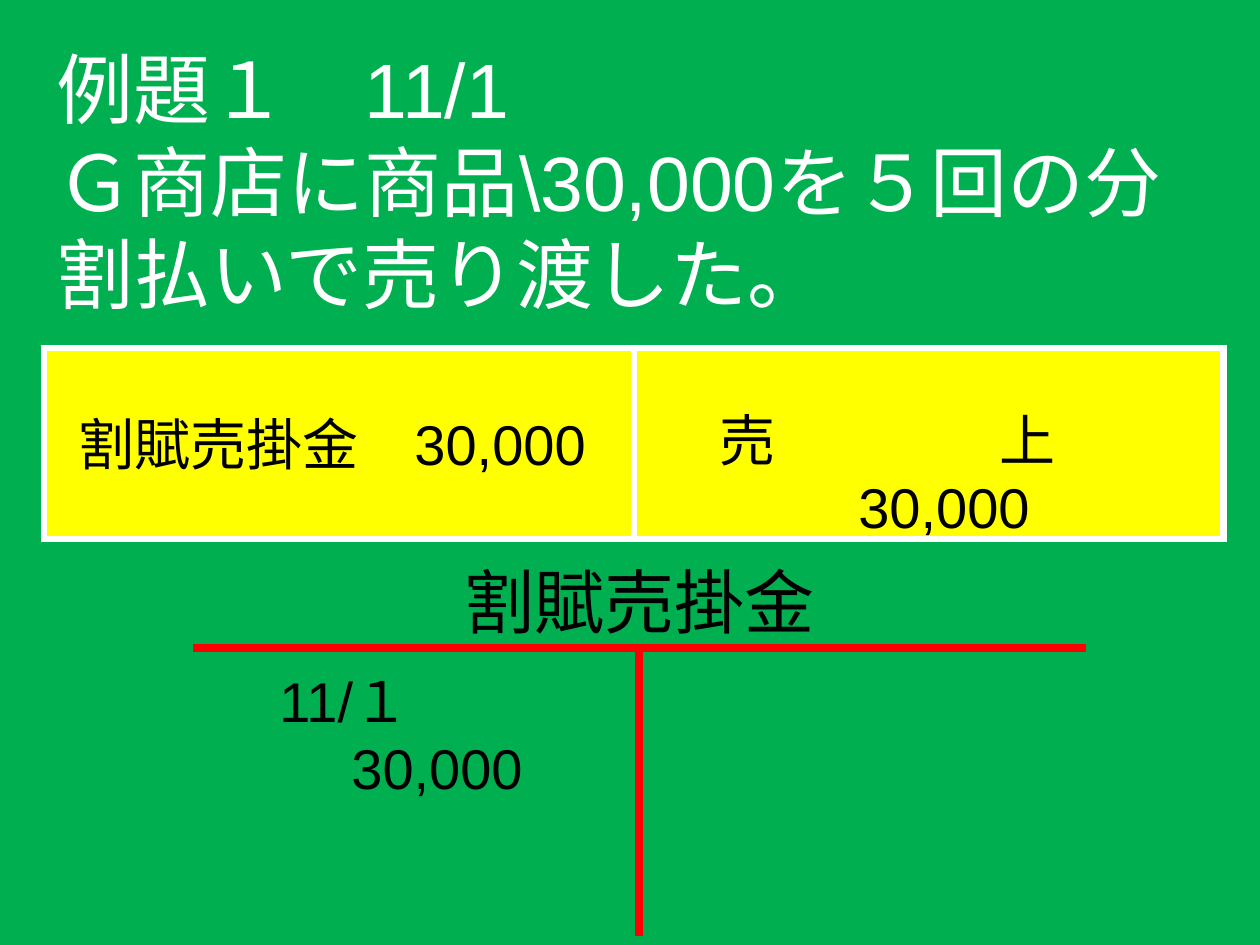
from dataclasses import dataclass

from lxml import etree
from pptx import Presentation
from pptx.dml.color import RGBColor
from pptx.enum.shapes import MSO_CONNECTOR
from pptx.enum.text import MSO_ANCHOR, MSO_AUTO_SIZE, PP_ALIGN
from pptx.oxml.ns import qn
from pptx.util import Emu, Inches, Pt

LEFT, CENTER = PP_ALIGN.LEFT, PP_ALIGN.CENTER
MIDDLE = MSO_ANCHOR.MIDDLE
NO_FIT = MSO_AUTO_SIZE.NONE
STRAIGHT = MSO_CONNECTOR.STRAIGHT
TITLE_ONLY = 5


@dataclass(frozen=True)
class Theme:
    font: str = "Arial"
    background: str = "00B050"
    title: str = "FFFFFF"
    text: str = "000000"
    cell: str = "FFFF00"
    border: str = "FFFFFF"
    rule: str = "FF0000"
    title_size: int = 44
    heading_size: int = 40
    body_size: int = 32
    line_width: float = 4.5


THEME = Theme()


def px(length):
    return Emu(round(length * Inches(1) / 126))


def color(code):
    return RGBColor.from_string(code)


def style_para(para, size, code, align):
    para.alignment = align
    for span in para.runs:
        span.font.name = THEME.font
        span.font.size = Pt(size)
        span.font.color.rgb = color(code)


def add_text(page, box, lines, size, align=LEFT, indents=(0, 0)):
    shape = page.shapes.add_textbox(*map(px, box))
    frame = shape.text_frame
    frame.word_wrap = True
    frame.text = "\n".join(lines)
    for para, indent in zip(frame.paragraphs, indents):
        style_para(para, size, THEME.text, align)
        if indent:
            para._p.get_or_add_pPr().set("marL", str(px(indent)))
    return frame


def add_rule(page, start, end):
    rule = page.shapes.add_connector(STRAIGHT, *map(px, start + end))
    rule.line.color.rgb = color(THEME.rule)
    rule.line.width = Pt(THEME.line_width)
    etree.SubElement(rule._element.spPr, qn("a:effectLst"))


def border_cell(cell):
    properties = cell._tc.get_or_add_tcPr()
    for position, side in enumerate(("lnL", "lnR", "lnT", "lnB")):
        line = etree.Element(qn(f"a:{side}"), w=str(Pt(THEME.line_width)))
        fill = etree.SubElement(line, qn("a:solidFill"))
        etree.SubElement(fill, qn("a:srgbClr"), val=THEME.border)
        properties.insert(position, line)


def build_question(page, box):
    title = page.shapes.title
    title.left, title.top, title.width, title.height = map(px, box)
    frame = title.text_frame
    frame.text = "例題１　11/1\vＧ商店に商品\\30,000を５回の分割払いで売り渡した。"
    frame.word_wrap = True
    frame.auto_size = NO_FIT
    frame.vertical_anchor = MIDDLE
    style_para(frame.paragraphs[0], THEME.title_size, THEME.title, LEFT)


def build_journal(page, box):
    left, top, width, height = box
    table = page.shapes.add_table(1, 2, *map(px, box)).table
    for cell in table.iter_cells():
        cell.fill.solid()
        cell.fill.fore_color.rgb = color(THEME.cell)
        border_cell(cell)

    half = width // 2
    add_text(page, (left, top + 55, half - 14, 80), ["割賦売掛金　30,000"],
             THEME.body_size, CENTER)
    credit = add_text(page, (left + half + 11, top + 51, half - 34, 144),
                      ["売上", "30,000"], THEME.body_size, LEFT, (62, 201))
    name = credit.paragraphs[0]
    name.text = "売"
    name.add_run().text = "上"
    style_para(name, THEME.body_size, THEME.text, LEFT)
    name.runs[0].font._element.set("spc", str(THEME.body_size * 4 * 100))


def build_account(page, box):
    left, top, width, height = box
    middle, rule_top = left + width // 2, top + 96
    add_rule(page, (left, rule_top), (left + width, rule_top))
    add_rule(page, (middle, rule_top), (middle, top + height))
    add_text(page, (left, top, width, 97), ["割賦売掛金"],
             THEME.heading_size, CENTER)
    add_text(page, (left, rule_top + 12, width // 2, 148), ["11/１", "30,000"],
             THEME.body_size, LEFT, (74, 146))


def main():
    deck = Presentation()
    deck.slide_width, deck.slide_height = px(1260), px(945)
    page = deck.slides.add_slide(deck.slide_layouts[TITLE_ONLY])
    page.background.fill.solid()
    page.background.fill.fore_color.rgb = color(THEME.background)
    build_question(page, (44, 57, 1191, 247))
    build_journal(page, (44, 348, 1180, 191))
    build_account(page, (193, 552, 893, 384))
    deck.save("out.pptx")


if __name__ == "__main__":
    main()
